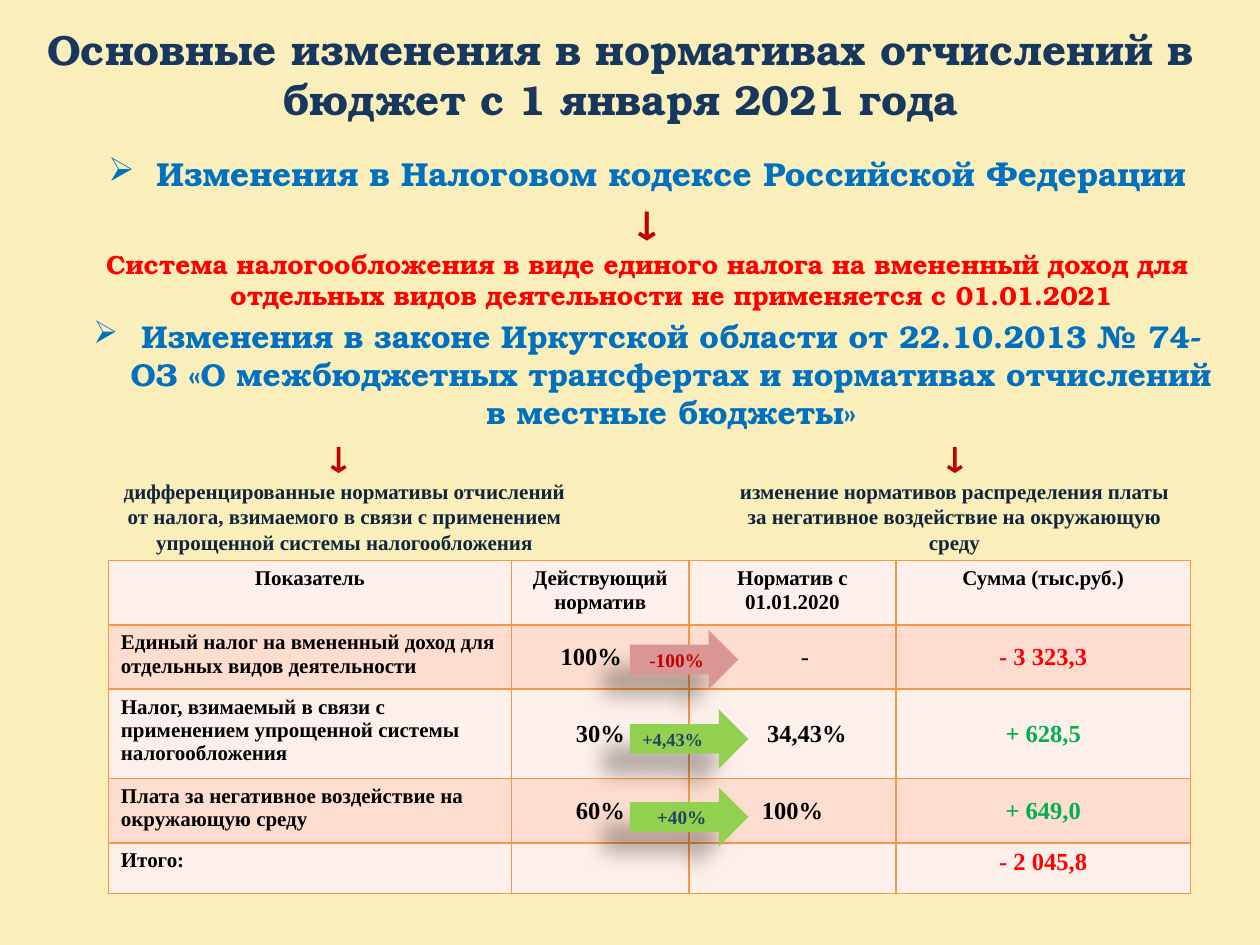
from dataclasses import dataclass

from lxml import etree
from pptx import Presentation
from pptx.dml.color import RGBColor
from pptx.enum.shapes import MSO_SHAPE
from pptx.enum.text import MSO_ANCHOR, PP_ALIGN
from pptx.oxml import parse_xml
from pptx.oxml.ns import nsdecls, qn
from pptx.util import Inches, Pt

LEFT, CENTER, JUSTIFY = PP_ALIGN.LEFT, PP_ALIGN.CENTER, PP_ALIGN.JUSTIFY
TOP, MIDDLE = MSO_ANCHOR.TOP, MSO_ANCHOR.MIDDLE
RIGHT_ARROW = MSO_SHAPE.RIGHT_ARROW


@dataclass(frozen=True)
class Theme:
    display: str = "TeX Gyre Bonum"
    body: str = "Times New Roman"
    page: str = "FAEEBA"
    title: str = "17375E"
    blue: str = "0070C0"
    dark_red: str = "C00000"
    red: str = "FF0000"
    green: str = "00B050"
    navy: str = "0F243E"
    black: str = "000000"
    border: str = "F79646"
    light_row: str = "FDEFE9"
    dark_row: str = "FCDDCF"
    pink: str = "D99694"
    lime: str = "92D050"
    arrow_text: str = "254061"
    title_size: float = 24
    large: float = 20
    heading: float = 19
    subheading: float = 18
    notice: float = 15
    figure: float = 14
    label: float = 12
    change: float = 11
    small_change: float = 10.5


theme = Theme()


def write(para, text, size=theme.label, color=theme.black, font=theme.body,
          bold=True, align=CENTER):
    para.alignment = align
    span = para.add_run()
    span.text = text
    span.font.size = Pt(size)
    span.font.name = font
    span.font.bold = bold
    span.font.color.rgb = RGBColor.from_string(color)


def add_box(page, left, top, width, height, anchor=TOP):
    box = page.shapes.add_textbox(Inches(left), Inches(top), Inches(width), Inches(height))
    box.text_frame.word_wrap = True
    box.text_frame.vertical_anchor = anchor
    return box.text_frame


deck = Presentation()
deck.slide_width, deck.slide_height = Inches(10), Inches(7.5)
page = deck.slides.add_slide(deck.slide_layouts[6])
page.background.fill.solid()
page.background.fill.fore_color.rgb = RGBColor.from_string(theme.page)

title = add_box(page, 0.16, 0, 9.53, 1.17, MIDDLE)
write(title.paragraphs[0], "Основные изменения в нормативах отчислений в бюджет с 1 января 2021 года",
      size=theme.title_size, color=theme.title, font=theme.display)

changes = [
    ("Изменения в Налоговом кодексе Российской Федерации", theme.heading, theme.blue, True),
    ("↓", theme.large, theme.dark_red, False),
    ("Система налогообложения в виде единого налога на вмененный доход для "
     "отдельных видов деятельности не применяется с 01.01.2021", theme.notice, theme.red, False),
    ("Изменения в законе Иркутской области от 22.10.2013 № 74-ОЗ «О межбюджетных "
     "трансфертах и нормативах отчислений в местные бюджеты»", theme.subheading, theme.blue, True),
    ("\t↓\t↓", theme.subheading, theme.dark_red, False),
]
body = add_box(page, 0.47, 1.17, 9.34, 4.95)
for index, (text, size, color, bulleted) in enumerate(changes):
    para = body.add_paragraph() if index else body.paragraphs[0]
    properties = para._p.get_or_add_pPr()
    tabbed = "\t" in text
    if tabbed:
        tabs = etree.SubElement(properties, qn("a:tabLst"))
        for position in (2.12, 7.01):
            etree.SubElement(tabs, qn("a:tab"), pos=str(Inches(position)), algn="ctr")
    else:
        properties.set("marL", str(Inches(0.38)))
        properties.set("indent", str(Inches(-0.38)))
    if bulleted:
        etree.SubElement(properties, qn("a:buChar"), char="➢")
    if index:
        para.space_before = Pt(size * 0.2)
    write(para, text, size=size, color=color, font=theme.display, align=LEFT if tabbed else CENTER)

reasons = [
    (0.86, "дифференцированные нормативы отчислений от налога, взимаемого в связи "
           "с применением упрощенной системы налогообложения"),
    (5.7, "изменение нормативов распределения платы за негативное воздействие "
          "на окружающую среду"),
]
for left, text in reasons:
    write(add_box(page, left, 3.75, 3.75, 0.71).paragraphs[0], text, color=theme.navy)

rows = [
    ("Показатель", "Действующий норматив", "Норматив с 01.01.2020", "Сумма (тыс.руб.)"),
    ("Единый налог на вмененный доход для отдельных видов деятельности", "100%", "-", "- 3 323,3"),
    ("Налог, взимаемый в связи с применением упрощенной системы налогообложения",
     "30%", "34,43%", "+ 628,5"),
    ("Плата за негативное воздействие на окружающую среду", "60%", "100%", "+ 649,0"),
    ("Итого:", "", "", "- 2 045,8"),
]
widths = [3.2, 1.41, 1.64, 2.34]
heights = [0.51, 0.51, 0.71, 0.51, 0.34]
left_margins = {(1, 1): 0.39, (1, 2): 0.3, (2, 2): 0.33}
table = page.shapes.add_table(len(rows), len(widths), Inches(0.86), Inches(4.45),
                              Inches(sum(widths)), Inches(sum(heights))).table
for column, width in zip(table.columns, widths):
    column.width = Inches(width)
for row_index, (texts, height) in enumerate(zip(rows, heights)):
    table.rows[row_index].height = Inches(height)
    for column_index, text in enumerate(texts):
        place = (row_index, column_index)
        cell = table.cell(row_index, column_index)
        for side in ("lnL", "lnR", "lnT", "lnB"):
            cell._tc.get_or_add_tcPr().append(parse_xml(
                f'<a:{side} {nsdecls("a")} w="{Pt(1)}"><a:solidFill>'
                f'<a:srgbClr val="{theme.border}"/></a:solidFill></a:{side}>'))
        cell.fill.solid()
        cell.fill.fore_color.rgb = RGBColor.from_string(
            theme.dark_row if row_index % 2 else theme.light_row)
        cell.margin_left = Inches(left_margins.get(place, 0.1))
        is_figure = row_index > 0 and column_index > 0
        cell.vertical_anchor = MIDDLE if is_figure and row_index < 4 else TOP
        color = theme.black
        if is_figure and column_index == 3:
            color = theme.green if text.startswith("+") else theme.red
        starts_left = place == (1, 1) or (row_index > 0 and column_index == 0)
        if text:
            write(cell.text_frame.paragraphs[0], text, color=color, bold=text != "-",
                  size=theme.figure if is_figure else theme.label,
                  align=LEFT if starts_left else CENTER)

arrows = [
    ("-100%", 5, 0.86, theme.pink, theme.dark_red, theme.change, CENTER),
    ("+4,43%", 5.63, 0.94, theme.lime, theme.arrow_text, theme.small_change, JUSTIFY),
    ("+40%", 6.25, 0.94, theme.lime, theme.arrow_text, theme.change, CENTER),
]
for text, top, width, fill, color, size, align in arrows:
    arrow = page.shapes.add_shape(RIGHT_ARROW, Inches(5), Inches(top), Inches(width), Inches(0.47))
    arrow.fill.solid()
    arrow.fill.fore_color.rgb = RGBColor.from_string(fill)
    arrow.line.fill.background()
    arrow.shadow.inherit = False
    arrow._element.spPr.find(qn("a:effectLst")).append(parse_xml(
        f'<a:outerShdw {nsdecls("a")} blurRad="{Pt(11.8)}" dist="{Pt(19.7)}" dir="{141 * 60000}">'
        f'<a:srgbClr val="{theme.black}"><a:alpha val="28000"/></a:srgbClr></a:outerShdw>'))
    arrow.text_frame.vertical_anchor = MIDDLE
    write(arrow.text_frame.paragraphs[0], text, size=size, color=color, align=align)

deck.save("out.pptx")
